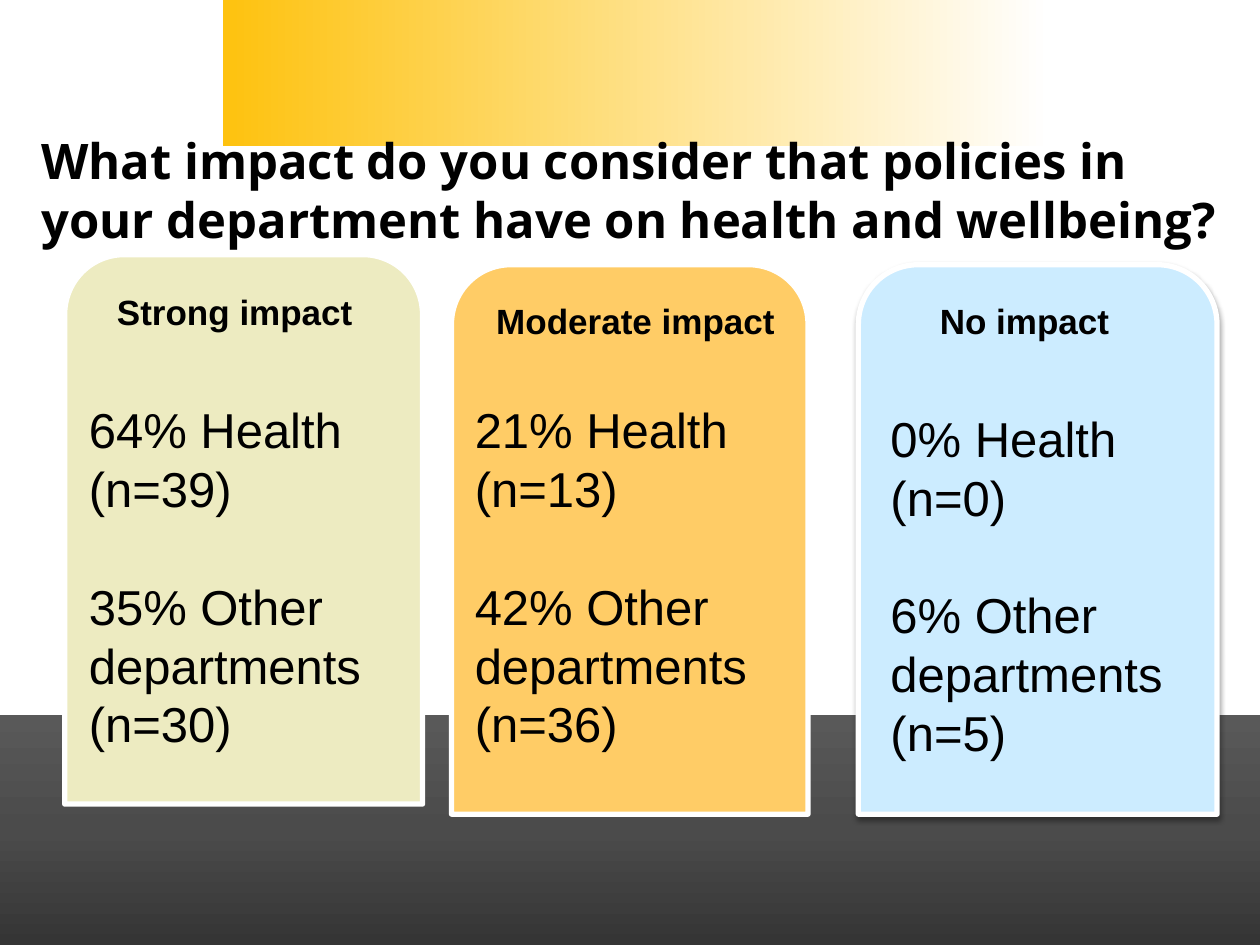
from copy import deepcopy

from lxml.etree import SubElement
from pptx import Presentation
from pptx.dml.color import RGBColor as RGB
from pptx.enum.shapes import MSO_SHAPE as SHAPE
from pptx.enum.text import MSO_ANCHOR as ANCHOR, PP_ALIGN as ALIGN
from pptx.oxml.ns import qn
from pptx.util import Pt

COLORS = {
    "white": "FFFFFF", "black": "000000", "gold": "FEC20F",
    "floor_dark": "353535", "floor_mid": "4B4B4B", "floor_light": "595959",
    "strong": "EDEBC1", "moderate": "FFCC66", "none": "CCECFF",
}
SLIDE_WIDTH = 720
LINE_PITCH = 33.6
CARD_HEIGHT = 314


class ImpactSlide:
    """Holds the style and the current slide, with one method per element kind."""

    def __init__(self, deck):
        self.slide = deck.slides.add_slide(deck.slide_layouts[5])

    def color(self, name):
        return RGB.from_string(COLORS[name])

    def block(self, parent, kind, box, fill=None):
        block = parent.shapes.add_shape(kind, *map(Pt, box))
        block.shadow.inherit = False
        block.line.fill.background()
        if fill:
            block.fill.solid()
            block.fill.fore_color.rgb = self.color(fill)
        return block

    def gradient(self, box, names, angle):
        fill = self.block(self.slide, SHAPE.RECTANGLE, box).fill
        fill.gradient()
        fill.gradient_angle = angle
        stop_list = fill._fill._gradFill.find(qn("a:gsLst"))
        while len(stop_list) < len(names):
            stop_list.append(deepcopy(stop_list[0]))
        for order, (stop, name) in enumerate(zip(fill.gradient_stops, names)):
            stop.color.rgb = self.color(name)
            stop.position = order / (len(names) - 1)

    def add_words(self, paragraph, words, font, **layout):
        run = paragraph.add_run()
        run.text = words
        for key, value in font.items():
            setattr(run.font, key, value)
        run.font.color.rgb = self.color("black")
        for key, value in layout.items():
            setattr(paragraph, key, value)

    def title(self, words, box):
        title = self.slide.shapes.title
        for key, value in zip(("left", "top", "width", "height"), box):
            setattr(title, key, Pt(value))
        title.text_frame.vertical_anchor = ANCHOR.MIDDLE
        title.text_frame.word_wrap = True
        font = {"name": "Open Sans", "size": Pt(28), "bold": True}
        self.add_words(title.text_frame.paragraphs[0], words, font,
                       alignment=ALIGN.LEFT, line_spacing=Pt(LINE_PITCH))
        self.slide.shapes._spTree.append(title._element)

    def text(self, parent, box, groups, font, **layout):
        frame = parent.shapes.add_textbox(*map(Pt, box)).text_frame
        frame.word_wrap = True
        paragraph = frame.paragraphs[0]
        for group_index, group in enumerate(groups):
            for line_index, words in enumerate(group):
                if group_index or line_index:
                    paragraph = frame.add_paragraph()
                self.add_words(paragraph, words, font, **layout)
                if group_index and not line_index:
                    paragraph.space_before = Pt(LINE_PITCH)

    def shadow(self, block):
        effects = block._element.spPr.find(qn("a:effectLst"))
        outer = SubElement(effects, qn("a:outerShdw"), blurRad=str(Pt(3.1)),
                           dist=str(Pt(1.8)), dir="5400000", rotWithShape="0")
        tint = SubElement(outer, qn("a:srgbClr"), val=COLORS["black"])
        SubElement(tint, qn("a:alpha"), val="35000")

    def card(self, left, top, width, fill, heading, heading_box, panel_height):
        group = self.slide.shapes.add_group_shape()
        outline = self.block(group, SHAPE.ROUND_2_SAME_RECTANGLE,
                             (left, top, width, CARD_HEIGHT), fill)
        outline.line.color.rgb = self.color("white")
        outline.line.width = Pt(3)
        self.block(group, SHAPE.RECTANGLE,
                   (left + 2.5, top + 62, width - 7, panel_height), fill)
        tab = self.block(group, SHAPE.ROUND_2_SAME_RECTANGLE,
                         (left + 12, top + 8.5, width - 24, 48), fill)
        tab.adjustments[0] = 0.46
        self.text(group, heading_box, [[heading]],
                  {"name": "Arial", "size": Pt(20), "bold": True})
        return group, outline

    def results(self, left, top, health, others):
        box = (left, top, min(360, SLIDE_WIDTH - left), 211)
        self.text(self.slide, box, [health, others],
                  {"name": "Arial", "size": Pt(28)}, line_spacing=Pt(LINE_PITCH))


def main():
    deck = Presentation()
    deck.slide_width, deck.slide_height = Pt(SLIDE_WIDTH), Pt(540)
    page = ImpactSlide(deck)
    page.gradient((127.5, 0, 472.5, 83.5), ("gold", "white"), 0)
    page.gradient((0, 408.75, SLIDE_WIDTH, 131.25),
                  ("floor_dark", "floor_mid", "floor_light"), 90)
    page.title("What impact do you consider that policies in your department "
               "have on health and wellbeing?", (16.5, 71.5, 703.5, 73.5))

    page.card(37, 145.5, 204.5, "strong", "Strong impact",
              (59.75, 162.75, 155.5, 60.5), 55.5)
    moderate, _ = page.card(258, 151.25, 203.75, "moderate", "Moderate impact",
                            (276.5, 167.75, 180.75, 60.5), 31.5)
    page.block(moderate, SHAPE.RECTANGLE, (424, 404.75, 16.5, 55.5), "moderate")
    _, no_impact = page.card(490.5, 151.25, 205, "none", "No impact",
                             (530, 167.75, 117.25, 31.75), 31.5)
    page.shadow(no_impact)

    for left, top, health, health_count, others, others_count in (
        (43.75, 225, "64%", 39, "35%", 30),
        (264.25, 225, "21%", 13, "42%", 36),
        (501.75, 230, "0%", 0, "6%", 5),
    ):
        page.results(left, top, (f"{health} Health", f"(n={health_count})"),
                     (f"{others} Other", "departments", f"(n={others_count})"))
    deck.save("out.pptx")


if __name__ == "__main__":
    main()
